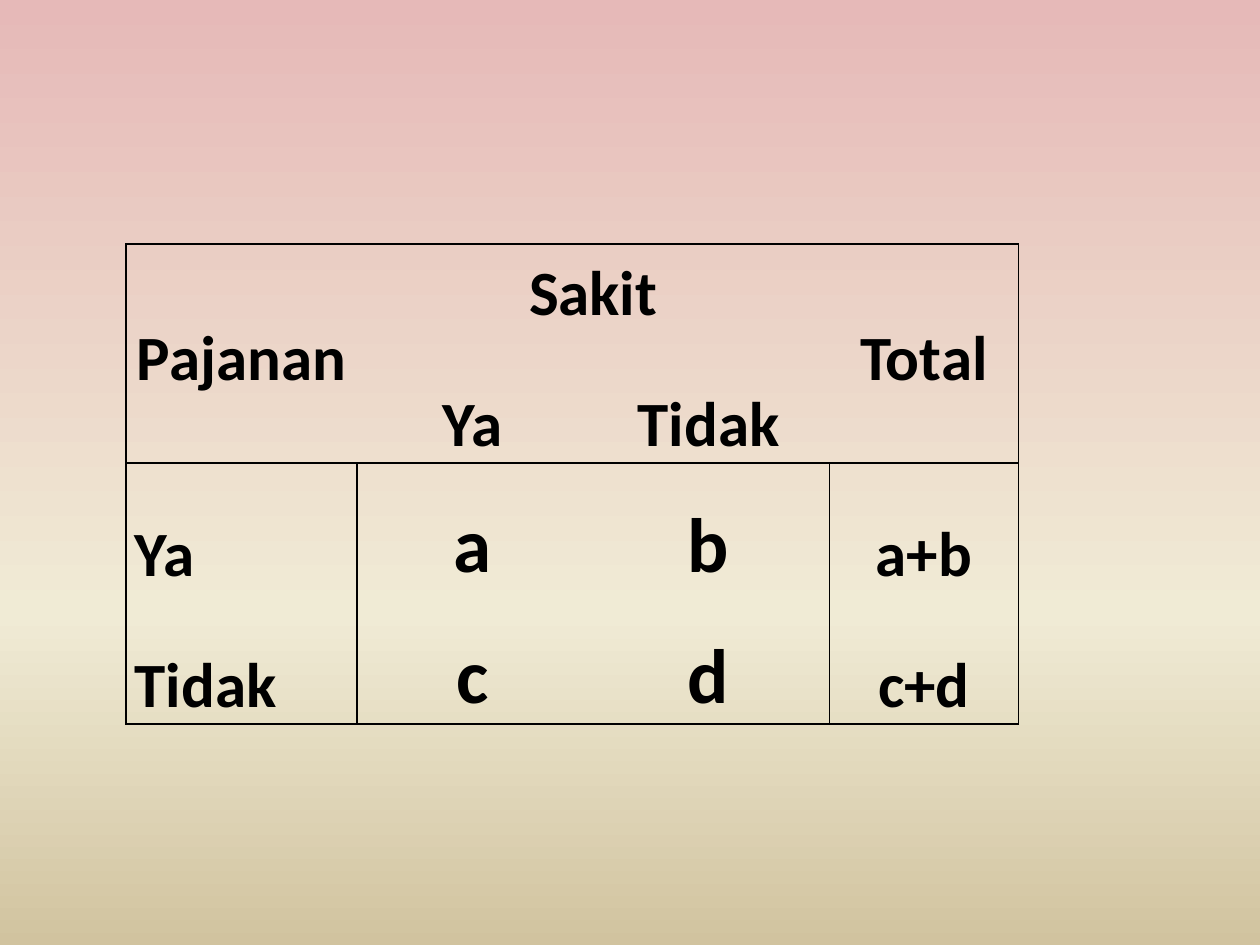
from copy import deepcopy
from dataclasses import dataclass

from lxml import etree
from pptx import Presentation
from pptx.dml.color import RGBColor
from pptx.enum import text
from pptx.oxml.ns import qn
from pptx.util import Pt


@dataclass(frozen=True)
class Theme:
    font: str = "Calibri"
    ink: str = "000000"
    label_size: int = 36
    value_size: int = 44
    border: int = 1
    background: tuple = ((0, "E6B9B8"), (0.65, "F0EBD5"), (1, "D1C39F"))


class SlideBuilder:
    def __init__(self, slide, theme):
        self.slide = slide
        self.theme = theme

    def gradient_background(self):
        fill = self.slide.background.fill
        fill.gradient()
        fill.gradient_angle = 270
        stop_list = next(self.slide.element.iter(qn("a:gsLst")))
        stop_list.append(deepcopy(stop_list[-1]))
        for stop, (position, color) in zip(fill.gradient_stops, self.theme.background):
            stop.position = position
            stop.color.rgb = RGBColor.from_string(color)

    def table(self, left, top, widths, heights):
        frame = self.slide.shapes.add_table(
            len(heights), len(widths), Pt(left), Pt(top), Pt(sum(widths)), Pt(sum(heights)))
        table = frame.table
        table.first_row = table.horz_banding = False
        for column, width in zip(table.columns, widths):
            column.width = Pt(width)
        for row, height in zip(table.rows, heights):
            row.height = Pt(height)
        return table

    def cell_text(self, cell, words, size, anchor, alignment):
        cell.margin_left = cell.margin_right = Pt(5)
        cell.margin_top = cell.margin_bottom = 0
        cell.vertical_anchor = anchor
        paragraph = cell.text_frame.paragraphs[0]
        paragraph.alignment = alignment
        paragraph.line_spacing = 1.15
        run = paragraph.add_run()
        run.text = words
        run.font.name = self.theme.font
        run.font.size = Pt(size)
        run.font.bold = True
        run.font.color.rgb = RGBColor.from_string(self.theme.ink)

    def cell_borders(self, cell, visible):
        """Draw the sides named in visible and clear the others."""
        cell.fill.background()
        properties = cell._tc.get_or_add_tcPr()
        for index, side in enumerate("LRTB"):
            line = etree.Element(qn(f"a:ln{side}"), w=str(Pt(self.theme.border)))
            if side in visible:
                fill = etree.SubElement(line, qn("a:solidFill"))
                etree.SubElement(fill, qn("a:srgbClr"), val=self.theme.ink)
            else:
                etree.SubElement(line, qn("a:noFill"))
            properties.insert(index, line)


def visible_sides(row, column, bottom):
    """Outer frame, a rule under the header, and body rules beside the values."""
    vertical = (0, 4) if row < 2 else (0, 1, 3, 4)
    horizontal = (0, 2, 4)
    edges = (("L", column, vertical), ("R", column + 1, vertical),
             ("T", row, horizontal), ("B", bottom, horizontal))
    return {side for side, edge, ruled in edges if edge in ruled}


def main():
    theme = Theme()
    presentation = Presentation()
    presentation.slide_width, presentation.slide_height = Pt(720), Pt(540)
    slide = presentation.slides.add_slide(presentation.slide_layouts[6])
    builder = SlideBuilder(slide, theme)

    # Background
    builder.gradient_background()

    # Two-by-two exposure and disease table
    table = builder.table(72, 139.4, (132, 132, 138, 108), (34, 74.6, 74.6, 74.6))
    for first, last in (((0, 0), (1, 0)), ((0, 1), (0, 2)), ((0, 3), (1, 3))):
        table.cell(*first).merge(table.cell(*last))
    content = (
        ("Pajanan", "Sakit", None, "Total"),
        (None, "Ya", "Tidak", None),
        ("Ya", "a", "b", "a+b"),
        ("Tidak", "c", "d", "c+d"),
    )
    for row, entries in enumerate(content):
        for column, words in enumerate(entries):
            cell = table.cell(row, column)
            body = row >= 2
            if words:
                builder.cell_text(
                    cell, words,
                    theme.value_size if body and column in (1, 2) else theme.label_size,
                    text.MSO_ANCHOR.MIDDLE if row == 0 else text.MSO_ANCHOR.BOTTOM,
                    text.PP_ALIGN.LEFT if body and column == 0 else text.PP_ALIGN.CENTER)
            bottom = row + (cell.span_height if cell.is_merge_origin else 1)
            builder.cell_borders(cell, visible_sides(row, column, bottom))

    presentation.save("out.pptx")


if __name__ == "__main__":
    main()
